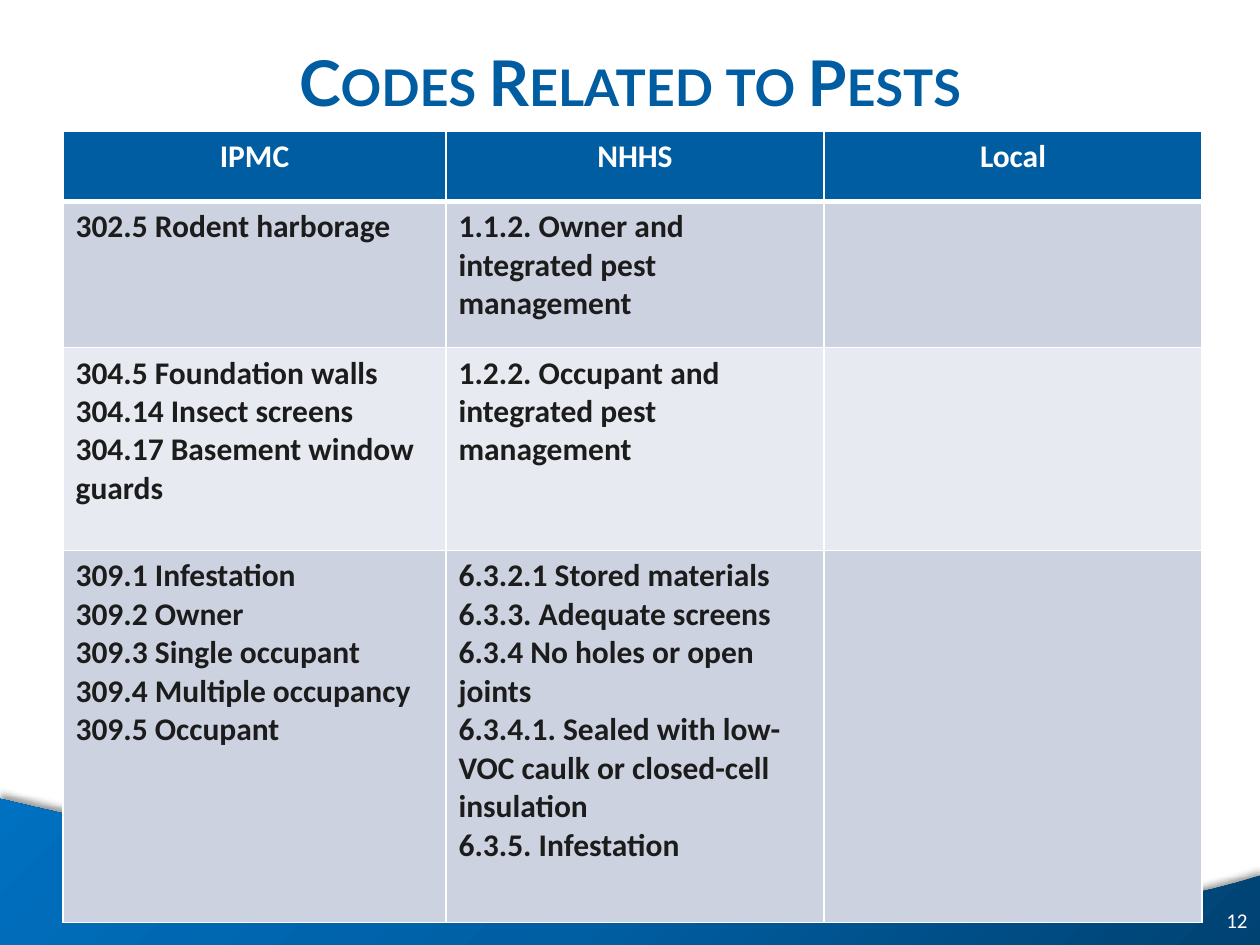
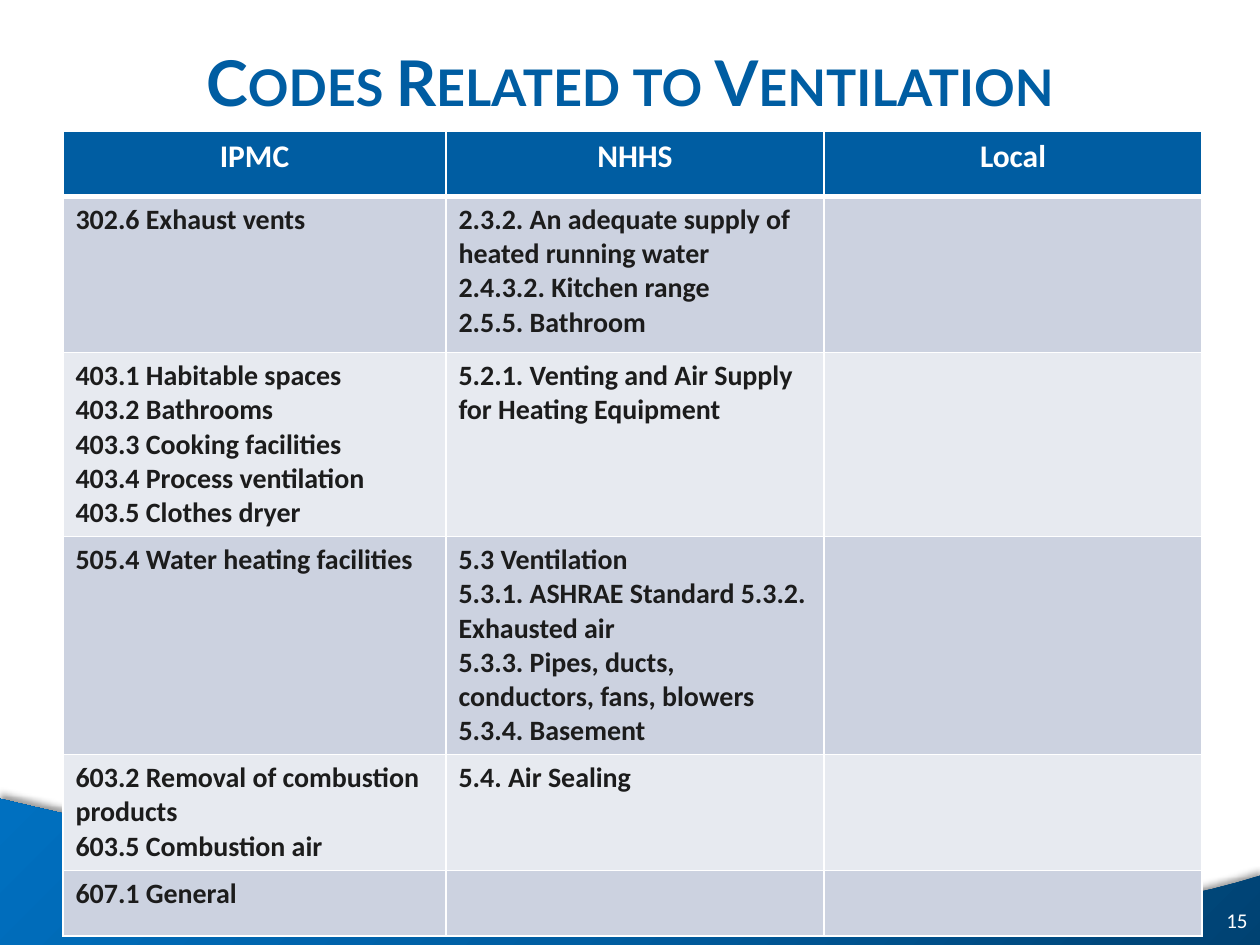
from lxml import etree
from pptx import Presentation
from pptx import oxml
from pptx.dml import color
from pptx.enum import text
from pptx.oxml import ns
from pptx.util import Inches, Pt

BLUE, INK, WHITE = "005DA2", "1C1C1C", "FFFFFF"
ROWS = ["CCD2E0", "E7EAF0"]
COLS = [3.04, 3, 3]
HEAD = ["IPMC", "NHHS", "Local"]

# Page number, title, body text size, row heights, body rows
PAGES = [
    (12, "Codes Related to Pests", 18, [0.56, 1.16, 1.61, 2.95], [
        ["302.5 Rodent harborage",
         "1.1.2. Owner and integrated pest management", ""],
        ["304.5 Foundation walls\n304.14 Insect screens\n"
         "304.17 Basement window guards",
         "1.2.2. Occupant and integrated pest management", ""],
        ["309.1 Infestation\n309.2 Owner\n309.3 Single occupant\n"
         "309.4 Multiple occupancy\n309.5 Occupant",
         "6.3.2.1 Stored materials\n6.3.3. Adequate screens\n"
         "6.3.4 No holes or open joints\n"
         "6.3.4.1. Sealed with low-VOC caulk or closed-cell insulation\n"
         "6.3.5. Infestation", ""],
    ]),
    (15, "Codes Related to Ventilation", 16,
     [0.52, 1.24, 1.46, 1.73, 0.92, 0.52], [
        ["302.6 Exhaust vents",
         "2.3.2. An adequate supply of heated running water\n"
         "2.4.3.2. Kitchen range\n2.5.5. Bathroom", ""],
        ["403.1 Habitable spaces\n403.2 Bathrooms\n403.3 Cooking facilities\n"
         "403.4 Process ventilation\n403.5 Clothes dryer",
         "5.2.1. Venting and Air Supply for Heating Equipment", ""],
        ["505.4 Water heating facilities",
         "5.3 Ventilation\n5.3.1. ASHRAE Standard 5.3.2. Exhausted air\n"
         "5.3.3. Pipes, ducts, conductors, fans, blowers\n"
         "5.3.4. Basement", ""],
        ["603.2 Removal of combustion products\n603.5 Combustion air",
         "5.4. Air Sealing", ""],
        ["607.1 General", "", ""],
    ]),
]

# Wave edge: points along a cubic curve, closed along the slide bottom
CURVE = [(0, 6.34), (3.22, 7.11), (7.62, 7.71), (10, 6.95)]
wave = []
for i in range(41):
    t = i / 40
    mix = [(1 - t) ** 3, 3 * t * (1 - t) ** 2, 3 * t * t * (1 - t), t ** 3]
    wave.append([Inches(sum(m * p[k] for m, p in zip(mix, CURVE)))
                 for k in (0, 1)])
wave += [(Inches(10.04), Inches(7.51)), (0, Inches(7.51))]

STOPS = [(0, "004272"), (50, "005EA2"), (100, "0070C0")]
GRAD = "<a:gradFill %s><a:gsLst>%s</a:gsLst><a:lin ang='13500000'/></a:gradFill>" % (
    ns.nsdecls("a"),
    "".join(f"<a:gs pos='{p * 1000}'><a:srgbClr val='{c}'/></a:gs>"
            for p, c in STOPS))
SHADOW = (f"<a:effectLst {ns.nsdecls('a')}><a:outerShdw blurRad='{Pt(4)}' "
          f"dist='{Pt(3)}' dir='16200000' rotWithShape='0'><a:srgbClr val='000000'>"
          "<a:alpha val='40000'/></a:srgbClr></a:outerShdw></a:effectLst>")


def style(frame, size, tint, bold=True, face="Calibri", align="LEFT"):
    for para in frame.paragraphs:
        para.alignment = getattr(text.PP_ALIGN, align)
        font = para.font
        if para.runs:
            font = para.runs[0].font
        font.size, font.bold, font.name = Pt(size), bold, face
        font.color.rgb = color.RGBColor.from_string(tint)


def edge(cell, side, width):
    line = etree.SubElement(cell._tc.get_or_add_tcPr(), ns.qn("a:ln" + side),
                            w=str(Pt(width)))
    fill = etree.SubElement(line, ns.qn("a:solidFill"))
    etree.SubElement(fill, ns.qn("a:srgbClr"), val=WHITE)


prs = Presentation()
prs.slide_width, prs.slide_height = Inches(10), Inches(7.5)

for num, name, size, highs, body in PAGES:
    slide = prs.slides.add_slide(prs.slide_layouts[5])
    items = slide.shapes

    # Wave band, sent behind the title
    pen = items.build_freeform(*wave[0])
    pen.add_line_segments(wave[1:])
    band = pen.convert_to_shape()
    band.line.fill.background()
    band.fill.background()
    props = band._element.spPr
    props.replace(props.find(ns.qn("a:noFill")), oxml.parse_xml(GRAD))
    props.append(oxml.parse_xml(SHADOW))
    items._spTree.insert(2, band._element)

    # Title
    title = items.title
    title.left, title.top = 0, Inches(0.02)
    title.width, title.height = Inches(10), Inches(1.25)
    frame = title.text_frame
    frame.text = name
    frame.auto_size = text.MSO_AUTO_SIZE.NONE
    frame.vertical_anchor = text.MSO_ANCHOR.MIDDLE
    style(frame, 36, BLUE, face="Lato", align="CENTER")
    frame.paragraphs[0].runs[0].font._element.set("cap", "small")

    # Code table
    grid = items.add_table(len(highs), len(COLS), Inches(0.5), Inches(1.04),
                           Inches(sum(COLS)), Inches(sum(highs))).table
    grid.horz_banding = False
    for col, wide in zip(grid.columns, COLS):
        col.width = Inches(wide)
    for r, (high, row) in enumerate(zip(highs, [HEAD] + body)):
        grid.rows[r].height = Inches(high)
        for c, words in enumerate(row):
            cell = grid.cell(r, c)
            cell.text_frame.text = words
            for side in "LRTB":
                thick = (r, side) in [(0, "B"), (1, "T")]
                edge(cell, side, 3 if thick else 1)
            cell.fill.solid()
            shade = ROWS[(r - 1) % 2] if r else BLUE
            cell.fill.fore_color.rgb = color.RGBColor.from_string(shade)
            if r:
                style(cell.text_frame, size, INK)
            else:
                style(cell.text_frame, 18, WHITE, align="CENTER")

    # Page number
    box = items.add_textbox(Inches(9.47), Inches(7.1), Inches(0.53), Inches(0.4))
    frame = box.text_frame
    frame.word_wrap = True
    frame.vertical_anchor = text.MSO_ANCHOR.MIDDLE
    frame.text = str(num)
    style(frame, 12, WHITE, bold=False, align="RIGHT")

prs.save("out.pptx")
